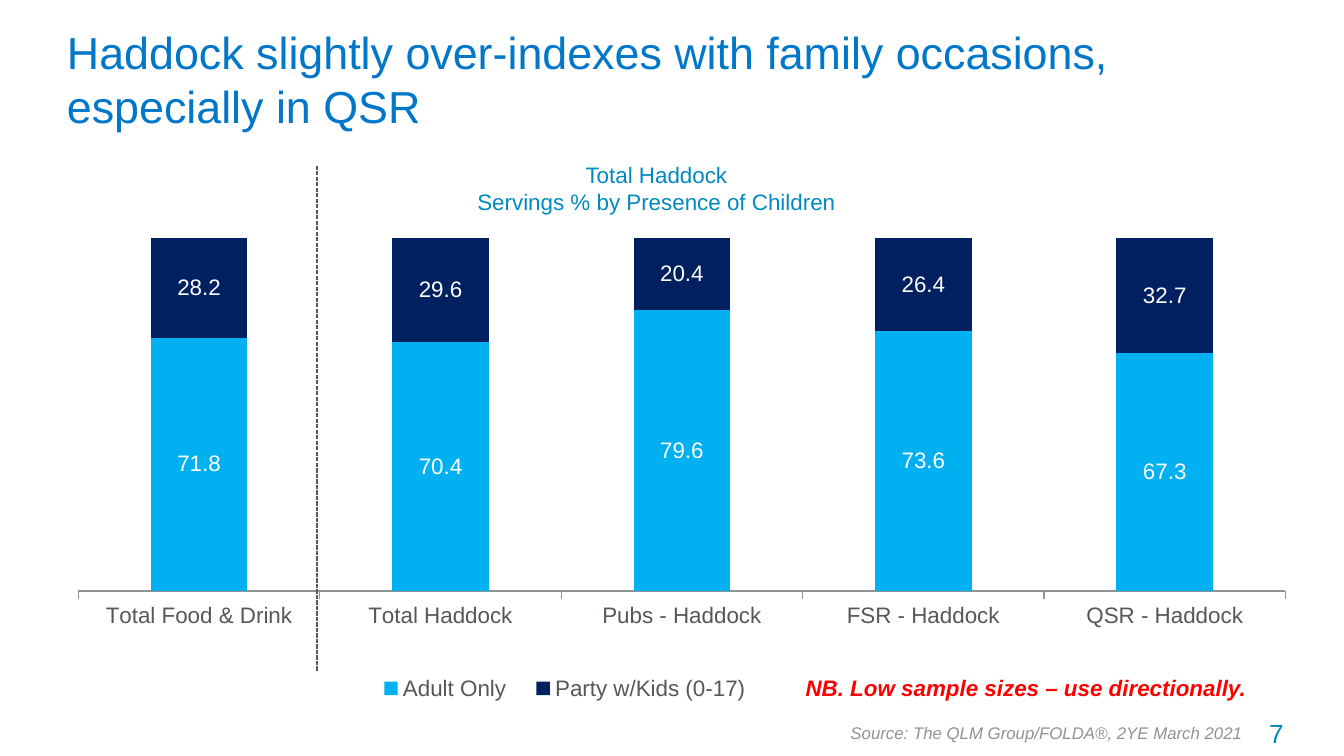
"""Build the slide on haddock servings by presence of children."""
from dataclasses import dataclass, field

from lxml.etree import SubElement as Sub
from pptx import Presentation
from pptx.chart.chart import Chart
from pptx.chart.data import CategoryChartData as Data
from pptx.dml.color import RGBColor as Color
from pptx.enum.chart import XL_CHART_TYPE as Kind
from pptx.enum.chart import XL_LABEL_POSITION as Spot
from pptx.enum.chart import XL_LEGEND_POSITION as Side
from pptx.enum.chart import XL_TICK_MARK as Tick
from pptx.enum.dml import MSO_LINE as Dash
from pptx.enum.shapes import MSO_CONNECTOR as Link
from pptx.enum.text import MSO_ANCHOR as Anchor
from pptx.enum.text import PP_ALIGN as Align
from pptx.oxml.ns import qn
from pptx.slide import Slide
from pptx.util import Inches, Pt


@dataclass(frozen=True)
class Theme:
    face: str = "Arial"
    title: str = "0077C8"
    teal: str = "008AC0"
    ink: str = "54585A"
    gray: str = "8E9396"
    red: str = "FF0000"
    white: str = "FFFFFF"
    sky: str = "00B0F0"
    navy: str = "002060"
    head: int = 24
    page: int = 14
    body: int = 12
    note: int = 9


@dataclass(frozen=True)
class Label:
    text: str
    box: tuple[float, float, float, float]
    size: int
    color: str
    style: dict = field(default_factory=dict)
    frame: dict = field(default_factory=dict)
    para: dict = field(default_factory=dict)


@dataclass(frozen=True)
class Series:
    name: str
    color: str
    values: tuple[float, ...]


THEME = Theme()
GROUPS = ("Total Food & Drink", "Total Haddock", "Pubs - Haddock",
          "FSR - Haddock", "QSR - Haddock")
PARTS = (
    Series("Adult Only", THEME.sky, (71.8, 70.4, 79.6, 73.6, 67.3)),
    Series("Party w/Kids (0-17)", THEME.navy, (28.2, 29.6, 20.4, 26.4, 32.7)),
)
LABELS = (
    Label("Total Haddock\nServings % by Presence of Children",
          (3.44, 1.15, 2.89, 0.5), THEME.body, THEME.teal,
          frame={"word_wrap": False}, para={"alignment": Align.CENTER}),
    Label("7", (8.85, 5.29, 0.8, 0.34), THEME.page, THEME.teal,
          para={"alignment": Align.RIGHT}),
    Label("Haddock slightly over-indexes with family occasions, especially in QSR",
          (0.4, 0.23, 9.17, 0.71), THEME.head, THEME.title,
          frame={"vertical_anchor": Anchor.MIDDLE}),
    Label("NB. Low sample sizes – use directionally.",
          (5.7, 4.97, 3.87, 0.3), THEME.body, THEME.red,
          style={"bold": True, "italic": True},
          para={"alignment": Align.CENTER}),
    Label("Source: The QLM Group/FOLDA®, 2YE March 2021",
          (6.23, 5.33, 3.14, 0.25), THEME.note, THEME.gray,
          style={"italic": True}, frame={"word_wrap": False}),
)


def apply(item: object, values: dict) -> None:
    """Set each named value on the item."""
    for name, value in values.items():
        setattr(item, name, value)


def set_font(font: object, size: int, color: str, **style: bool) -> None:
    """Give a font its face, size, colour and style."""
    apply(font, {"name": THEME.face, "size": Pt(size), **style})
    font.color.rgb = Color.from_string(color)


def add_label(slide: Slide, label: Label) -> None:
    """Draw one text box."""
    frame = slide.shapes.add_textbox(*map(Inches, label.box)).text_frame
    apply(frame, {"word_wrap": True, **label.frame})
    frame.text = label.text
    for para in frame.paragraphs:
        apply(para, label.para)
        for run in para.runs:
            set_font(run.font, label.size, label.color, **label.style)


def place(node: object, after: str, inner: bool, **spots: float) -> None:
    """Fix the layout of a chart part by shares of the chart."""
    for old in node.findall(qn("c:layout")):
        node.remove(old)
    layout = Sub(node, qn("c:layout"))
    if after:
        node.find(qn(after)).addnext(layout)
    else:
        node.insert(0, layout)
    manual = Sub(layout, qn("c:manualLayout"))
    marks = {"layoutTarget": "inner"} if inner else {}
    marks |= {"xMode": "edge", "yMode": "edge", **spots}
    for name, value in marks.items():
        Sub(manual, qn(f"c:{name}")).set("val", str(value))


def add_bars(slide: Slide) -> Chart:
    """Draw the stacked columns."""
    data = Data(number_format="#,##0.0")
    data.categories = GROUPS
    for part in PARTS:
        data.add_series(part.name, part.values)
    box = map(Inches, (0.4, 1.34, 9.17, 3.92))
    chart = slide.shapes.add_chart(Kind.COLUMN_STACKED_100, *box, data).chart
    apply(chart, {"has_title": False, "has_legend": True})
    set_font(chart.font, THEME.body, THEME.ink)
    apply(chart.legend, {"position": Side.BOTTOM, "include_in_layout": False})
    apply(chart.value_axis, {"visible": False, "has_major_gridlines": False})
    axis = chart.category_axis
    axis.major_tick_mark = Tick.OUTSIDE
    axis.format.line.color.rgb = Color.from_string(THEME.gray)
    plot = chart.plots[0]
    apply(plot, {"gap_width": 150, "overlap": 100, "vary_by_categories": False})
    for part, bar in zip(PARTS, plot.series):
        bar.format.fill.solid()
        bar.format.fill.fore_color.rgb = Color.from_string(part.color)
        tags = bar.data_labels
        apply(tags, {"show_value": True, "number_format": "#,##0.0",
                     "number_format_is_linked": False, "position": Spot.CENTER})
        set_font(tags.font, THEME.body, THEME.white)
    root = chart.element
    place(root.find(f".//{qn('c:plotArea')}"), "", True,
          x=0.02, y=0.11, w=0.98, h=0.67)
    place(root.find(f".//{qn('c:legend')}"), "c:legendPos", False,
          x=0.25, y=0.93, w=0.33, h=0.07)
    return chart


def add_rule(slide: Slide) -> None:
    """Draw the dashed line beside the first column."""
    ends = map(Inches, (2.36, 4.99, 2.36, 1.23))
    rule = slide.shapes.add_connector(Link.STRAIGHT, *ends)
    apply(rule.line, {"width": Pt(0.75), "dash_style": Dash.SQUARE_DOT})
    rule.line.color.rgb = Color.from_string(THEME.ink)
    Sub(rule.element.spPr, qn("a:effectLst"))


def main() -> None:
    """Build and save the slide."""
    deck = Presentation()
    deck.slide_width = Inches(10)
    deck.slide_height = Inches(10 * 9 / 16)
    slide = deck.slides.add_slide(deck.slide_layouts[6])
    add_bars(slide)
    add_rule(slide)
    for label in LABELS:
        add_label(slide, label)
    deck.save("out.pptx")


if __name__ == "__main__":
    main()
